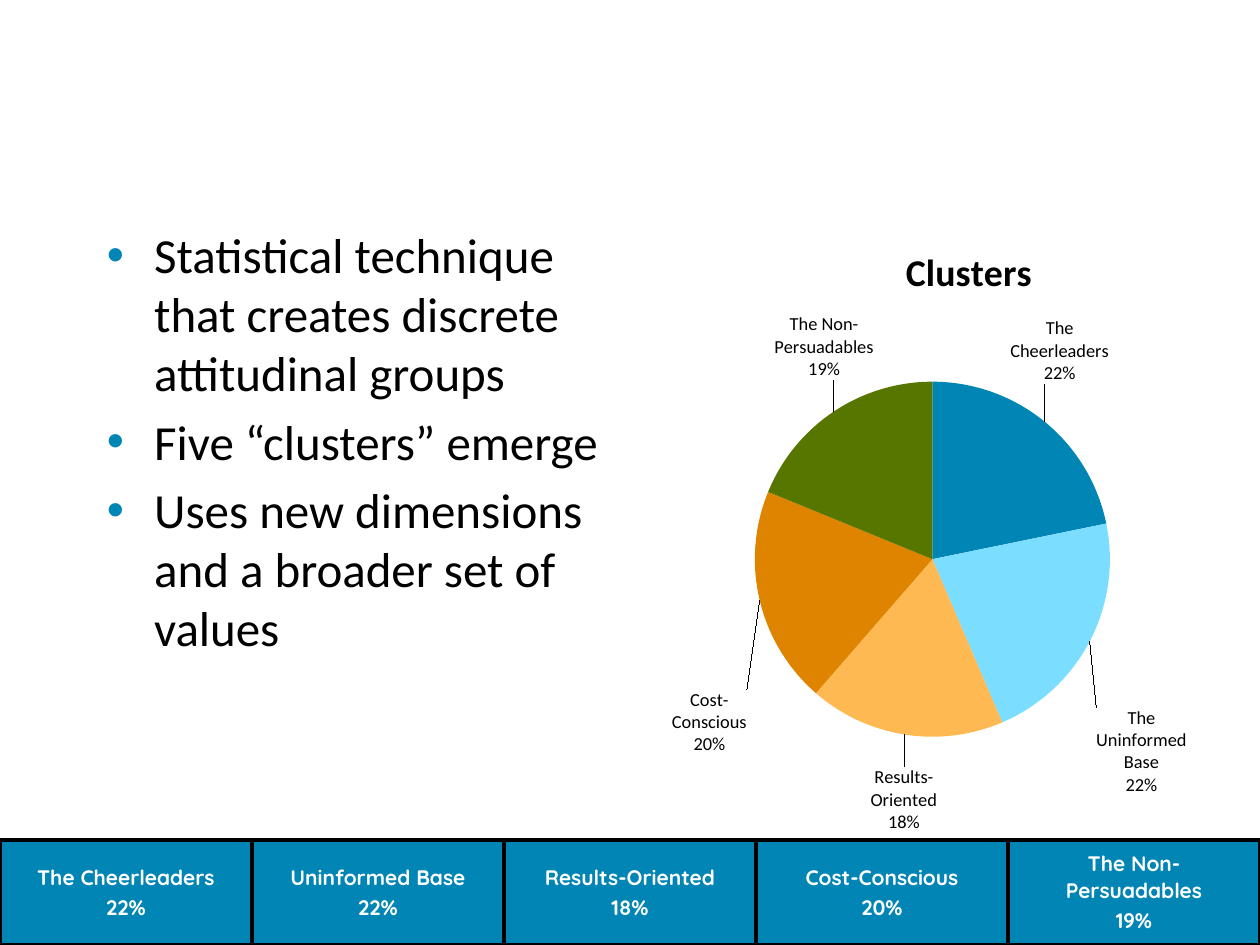
from lxml.etree import SubElement as Sub
from pptx import Presentation
from pptx.chart.data import CategoryChartData
from pptx.dml.color import RGBColor as RGB
from pptx.enum.chart import XL_CHART_TYPE as Kind, XL_LABEL_POSITION as Spot
from pptx.enum.text import MSO_ANCHOR as Anchor, PP_ALIGN as Align
from pptx.oxml import parse_xml
from pptx.oxml.ns import nsdecls, qn
from pptx.util import Pt

HUES = {"blue": "0085B4", "sky": "7BDDFF", "peach": "FFB952", "orange": "DE8400",
        "green": "577600", "black": "000000", "white": "FFFFFF"}
POINTS = ["Statistical technique that creates discrete attitudinal groups",
          "Five “clusters” emerge",
          "Uses new dimensions and a broader set of values"]
# chart name, table name, share, slice colour, label shift as a part of the chart
GROUPS = [
    ("The Cheerleaders", "The Cheerleaders", 0.22, "blue", (-0.07, -0.05)),
    ("The Uninformed Base", "Uninformed Base", 0.22, "sky", (0, 0.1)),
    ("Results-Oriented", "Results-Oriented", 0.18, "peach", (0.06, 0.04)),
    ("Cost-Conscious", "Cost-Conscious", 0.2, "orange", (-0.01, 0.14)),
    ("The Non-Persuadables", "The Non-Persuadables", 0.19, "green", (0.08, -0.04)),
]
WIDE, HIGH, BAND = 720, 540, 60


def style(font, size, hue, face="Calibri", bold=False):
    font.size, font.name, font.bold = Pt(size), face, bold
    font.color.rgb = RGB.from_string(HUES[hue])


def layout(**parts):
    """Return a manual chart layout with the given parts."""
    body = "".join(f'<c:{key} val="{val}"/>' for key, val in parts.items())
    return parse_xml(f'<c:layout {nsdecls("c")}><c:manualLayout>{body}'
                     '</c:manualLayout></c:layout>')


def add_points(slide):
    frame = slide.shapes.add_textbox(Pt(54), Pt(125), Pt(300), Pt(373)).text_frame
    frame.word_wrap = True
    for i, text in enumerate(POINTS):
        para = frame.paragraphs[0] if i == 0 else frame.add_paragraph()
        props = para._p.get_or_add_pPr()
        props.set("marL", str(Pt(27)))
        props.set("indent", str(-Pt(27)))
        Sub(Sub(props, qn("a:buClr")), qn("a:srgbClr"), val=HUES["blue"])
        Sub(props, qn("a:buFont"), typeface="Arial")
        Sub(props, qn("a:buChar"), char="•")
        if i:
            para.space_before = Pt(5.6)
        run = para.add_run()
        run.text = text
        style(run.font, 28, "black")


def add_border(cell):
    props = cell._tc.get_or_add_tcPr()
    for i, side in enumerate(("lnL", "lnR", "lnT", "lnB")):
        line = parse_xml(f'<a:{side} {nsdecls("a")} w="{Pt(2.25)}"><a:solidFill>'
                         f'<a:srgbClr val="{HUES["black"]}"/></a:solidFill></a:{side}>')
        props.insert(i, line)


def add_band(slide):
    table = slide.shapes.add_table(1, len(GROUPS), 0, Pt(HIGH - BAND),
                                   Pt(WIDE), Pt(BAND)).table
    for i, (_, name, share, _, _) in enumerate(GROUPS):
        cell = table.cell(0, i)
        cell.vertical_anchor = Anchor.MIDDLE
        cell.fill.solid()
        cell.fill.fore_color.rgb = RGB.from_string(HUES["blue"])
        add_border(cell)
        frame = cell.text_frame
        for j, text in enumerate((name, f"{share:.0%}")):
            para = frame.add_paragraph() if j else frame.paragraphs[0]
            para.alignment = Align.CENTER
            if j:
                para.space_before = Pt(2.4)
            run = para.add_run()
            run.text = text
            style(run.font, 12, "white", "Quicksand", True)


def add_pie(slide):
    data = CategoryChartData(number_format="0%")
    data.categories = [group[0] for group in GROUPS]
    data.add_series("Series 1", [group[2] for group in GROUPS])
    chart = slide.shapes.add_chart(Kind.PIE, Pt(377), Pt(122), Pt(318), Pt(356),
                                   data).chart
    style(chart.font, 18, "black")
    chart.has_legend = False
    chart.has_title = True
    run = chart.chart_title.text_frame.paragraphs[0].add_run()
    run.text = "Clusters"
    style(run.font, 21.6, "black", bold=True)
    title = chart.chart_title._element
    for old in title.findall(qn("c:layout")):
        title.remove(old)
    title.find(qn("c:tx")).addnext(
        layout(xMode="edge", yMode="edge", x=0.43, y=0.04))

    area = chart._chartSpace.chart.plotArea
    for old in area.findall(qn("c:layout")):
        area.remove(old)
    area.insert(0, layout(layoutTarget="inner", xMode="edge", yMode="edge",
                          x=0.17, y=0.27, w=0.64, h=0.57))
    plot = chart.plots[0]
    plot.vary_by_categories = True
    series = plot.series[0]
    labels = series.data_labels
    style(labels.font, 10.5, "black")
    labels.number_format, labels.number_format_is_linked = "0%", False
    labels.show_value = labels.show_category_name = True
    labels.position = Spot.OUTSIDE_END
    for i, (_, _, _, hue, _) in enumerate(GROUPS):
        point = series.points[i]
        point.format.fill.solid()
        point.format.fill.fore_color.rgb = RGB.from_string(HUES[hue])
        style(point.data_label.font, 10.5, "black")
        point.data_label.position = Spot.OUTSIDE_END

    root = labels._element
    for label, group in zip(root.findall(qn("c:dLbl")), GROUPS):
        x, y = group[4]
        place = layout(x=x, y=y)
        label.find(qn("c:idx")).addnext(place)
        place.addnext(parse_xml(f'<c:numFmt {nsdecls("c")} formatCode="0%" '
                                'sourceLinked="0"/>'))
        label.find(qn("c:showCatName")).set("val", "1")
    for part in [*root.findall(qn("c:dLbl")), root]:
        mark = parse_xml(f'<c:separator {nsdecls("c")}>\n</c:separator>')
        part.find(qn("c:showBubbleSize")).addnext(mark)
    for old in root.findall(qn("c:showLeaderLines")):
        root.remove(old)
    Sub(root, qn("c:showLeaderLines"), val="1")


def main():
    deck = Presentation()
    deck.slide_width, deck.slide_height = Pt(WIDE), Pt(HIGH)
    slide = deck.slides.add_slide(deck.slide_layouts[6])
    add_points(slide)
    add_band(slide)
    add_pie(slide)
    deck.save("out.pptx")


if __name__ == "__main__":
    main()
